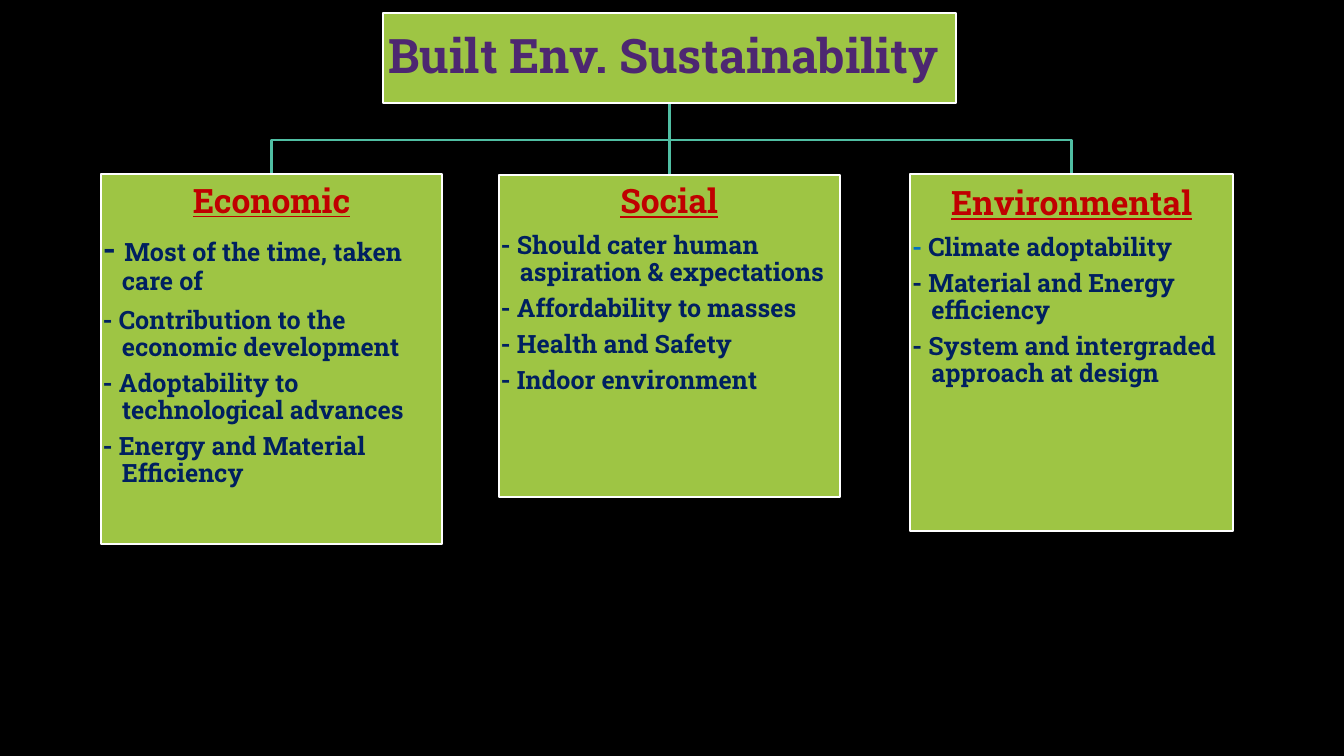
from pptx import Presentation
from pptx.dml.color import RGBColor
from pptx.enum.shapes import MSO_SHAPE as Shape
from pptx.enum.text import MSO_ANCHOR as Anchor, PP_ALIGN as Align
from pptx.util import Cm, Pt

FONT = "Roboto Slab"
GREEN, WHITE, TEAL = "9EC544", "FFFFFF", "50BEA3"
PURPLE, RED, NAVY, BLUE = "4D2771", "C00000", "002060", "0070C0"
HEADING_SIZE, BODY_SIZE = 24, 18
INSET, INDENT = 0.05, 0.48

# Boxes are left, top, width, height in centimetres
TITLE_BOX = (9.65, 0.33, 14.45, 2.26)
BUS_Y = 3.53

# Each bullet is a list of runs: text, size, colour
PILLARS = [
    {"heading": "Economic", "box": (2.54, 4.39, 8.61, 9.32), "top_inset": 0.25,
     "bullets": [
         [("- ", HEADING_SIZE, NAVY),
          ("Most of the time, taken care of", BODY_SIZE, NAVY)],
         [("- Contribution to the economic development", BODY_SIZE, NAVY)],
         [("- Adoptability to technological advances", BODY_SIZE, NAVY)],
         [("- Energy and Material Efficiency", BODY_SIZE, NAVY)]]},
    {"heading": "Social", "box": (12.57, 4.42, 8.59, 8.1), "top_inset": 0.23,
     "bullets": [
         [("- Should cater human aspiration & expectations", BODY_SIZE, NAVY)],
         [("- Affordability to masses", BODY_SIZE, NAVY)],
         [("- Health and Safety", BODY_SIZE, NAVY)],
         [("- Indoor environment", BODY_SIZE, NAVY)]]},
    {"heading": "Environmental", "box": (22.94, 4.39, 8.13, 8.99), "top_inset": 0.31,
     "bullets": [
         [("- ", BODY_SIZE, BLUE), ("Climate adoptability", BODY_SIZE, NAVY)],
         [("- Material and Energy efficiency", BODY_SIZE, NAVY)],
         [("- System and intergraded approach at design", BODY_SIZE, NAVY)]]},
]


def color(hex_value):
    return RGBColor.from_string(hex_value)


def set_format(target, values):
    for name, value in values.items():
        setattr(target, name, value)


def add_box(slide, box, anchor, top_inset=INSET):
    """Draw a green box and return its text frame."""
    shape = slide.shapes.add_shape(Shape.RECTANGLE, *(Cm(value) for value in box))
    shape.shadow.inherit = False
    shape.fill.solid()
    shape.fill.fore_color.rgb = color(GREEN)
    shape.line.color.rgb = color(WHITE)
    shape.line.width = Pt(1.5)
    set_format(shape.text_frame, {
        "word_wrap": True, "vertical_anchor": anchor,
        "margin_left": Cm(INSET), "margin_right": Cm(INSET),
        "margin_top": Cm(top_inset), "margin_bottom": Cm(INSET)})
    return shape.text_frame


def fill_paragraph(paragraph, runs, align, underline=False):
    set_format(paragraph, {
        "alignment": align, "line_spacing": 0.9,
        "space_after": Pt(0.35 * runs[0][1])})
    for text, size, hex_value in runs:
        run = paragraph.add_run()
        run.text = text
        set_format(run.font, {"name": FONT, "size": Pt(size), "bold": True,
                              "underline": underline})
        run.font.color.rgb = color(hex_value)


def add_title(slide, box):
    frame = add_box(slide, box, Anchor.MIDDLE)
    fill_paragraph(frame.paragraphs[0],
                   [("Built Env. Sustainability ", 34, PURPLE)], Align.CENTER)


def add_pillar(slide, box, heading, bullets, top_inset):
    frame = add_box(slide, box, Anchor.TOP, top_inset)
    fill_paragraph(frame.paragraphs[0], [(heading, HEADING_SIZE, RED)],
                   Align.CENTER, underline=True)
    for runs in bullets:
        paragraph = frame.add_paragraph()
        fill_paragraph(paragraph, runs, Align.LEFT)
        properties = paragraph._p.get_or_add_pPr()
        properties.set("marL", str(Cm(INDENT)))
        properties.set("indent", str(Cm(-INDENT)))


def add_branch(slide, parent, child):
    """Link the bottom of the parent box to the top of the child box."""
    start_x = parent[0] + parent[2] / 2
    start_y = parent[1] + parent[3]
    end_x = child[0] + child[2] / 2
    points = [(start_x, BUS_Y), (end_x, BUS_Y), (end_x, child[1])]
    builder = slide.shapes.build_freeform(Cm(start_x), Cm(start_y))
    builder.add_line_segments([(Cm(x), Cm(y)) for x, y in points], close=False)
    shape = builder.convert_to_shape()
    shape.shadow.inherit = False
    shape.fill.background()
    shape.line.color.rgb = color(TEAL)
    shape.line.width = Pt(2)


def main():
    presentation = Presentation()
    presentation.slide_width, presentation.slide_height = Cm(33.87), Cm(19.05)
    slide = presentation.slides.add_slide(presentation.slide_layouts[6])
    slide.background.fill.solid()
    slide.background.fill.fore_color.rgb = color("000000")

    # Branches lie behind the boxes
    for pillar in PILLARS:
        add_branch(slide, TITLE_BOX, pillar["box"])
    add_title(slide, TITLE_BOX)
    for pillar in PILLARS:
        add_pillar(slide, **pillar)

    presentation.save("out.pptx")


if __name__ == "__main__":
    main()
